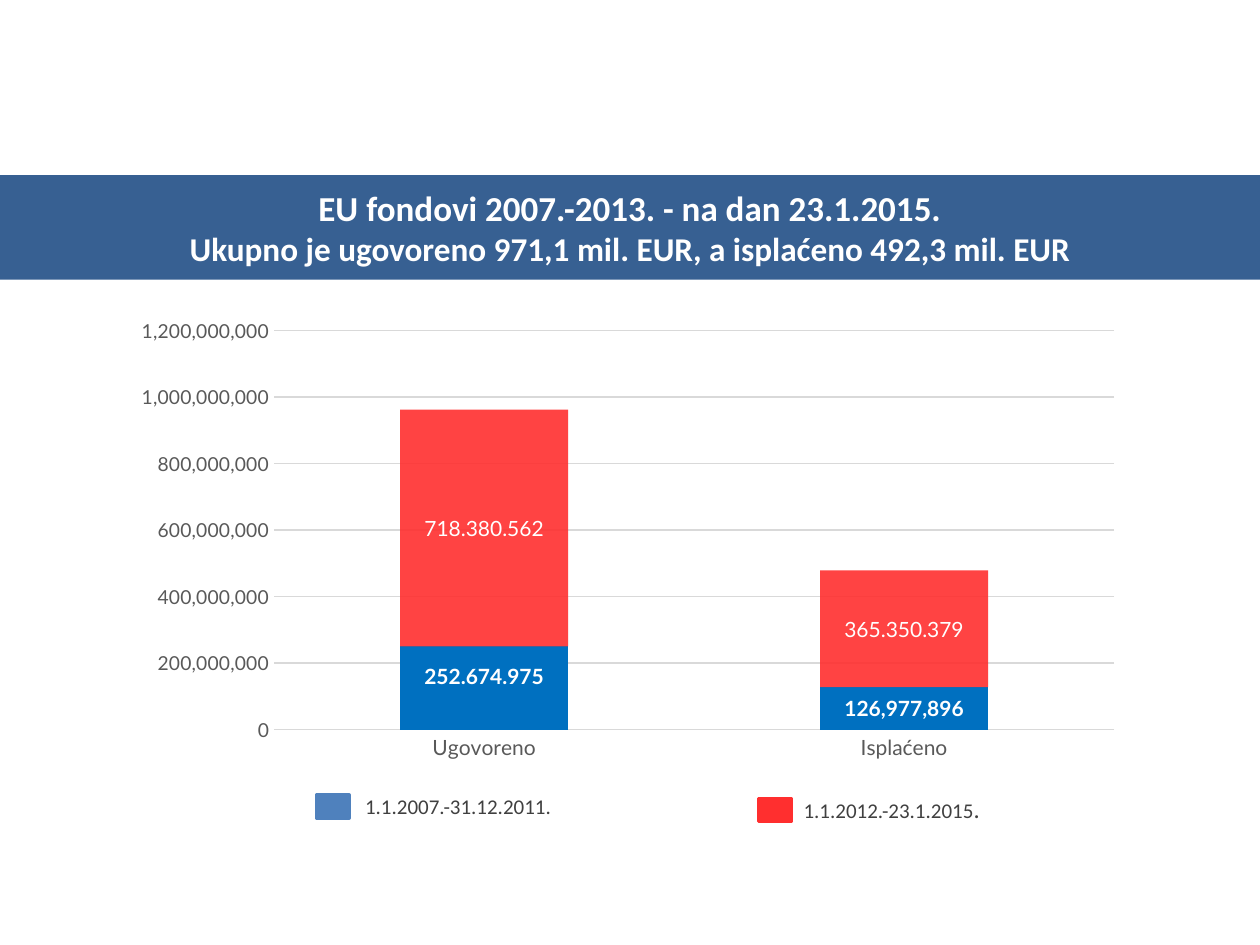
from dataclasses import dataclass

from lxml import etree
from pptx import Presentation
from pptx import util as u
from pptx.chart.data import CategoryChartData
from pptx.dml.color import RGBColor
from pptx.enum import chart as ch, shapes, text
from pptx.oxml import parse_xml
from pptx.oxml.ns import nsdecls, qn

NAVY = RGBColor(0x37, 0x60, 0x92)
BLUE = RGBColor(0x00, 0x70, 0xC0)
KEY_BLUE = RGBColor(0x4F, 0x81, 0xBD)
RED = RGBColor(0xFF, 0x2F, 0x2F)
WHITE = RGBColor(0xFF, 0xFF, 0xFF)
BLACK = RGBColor(0, 0, 0)
GREY = RGBColor(0x59, 0x59, 0x59)
DARK = RGBColor(0x40, 0x40, 0x40)
GRID = RGBColor(0xD9, 0xD9, 0xD9)


@dataclass
class Series:
    name: str
    values: tuple
    color: RGBColor
    labels: dict  # point index -> custom label


@dataclass
class Key:
    left: float
    top: float
    text_left: float
    text_width: float
    color: RGBColor
    runs: tuple  # (text, size)


SERIES = (
    Series("Series 1", (249997189, 126977896), BLUE, {0: "252.674.975"}),
    Series("Series 2", (712108231, 351492316), RED,
           {0: "718.380.562", 1: "365.350.379"}),
)
KEYS = (
    Key(6.38, 16.03, 7.11, 4.45, KEY_BLUE, (("1.1.2007.-31.12.2011.", 12),)),
    Key(15.29, 16.1, 15.95, 4.14, RED, (("1.1.2012.-23.1.2015", 12), (".", 14))),
)
TITLE = (
    ("EU fondovi 2007.-2013. - na dan 23.1.2015.", 20),
    ("Ukupno je ugovoreno 971,1 mil. EUR, a isplaćeno 492,3 mil. EUR", 19),
)


def set_font(font, name: str, size: float, color: RGBColor, bold: bool = False) -> None:
    font.name, font.size, font.bold = name, u.Pt(size), bold
    font.color.rgb = color


def manual_layout(**values):
    """Layout element of a chart part; keys are its child tags, in order."""
    items = "".join(f'<c:{tag} val="{v}"/>' for tag, v in values.items())
    return parse_xml(f'<c:layout {nsdecls("c")}><c:manualLayout>{items}'
                     '</c:manualLayout></c:layout>')


def draw_title(s) -> None:
    sp = s.shapes.title
    sp.left, sp.top, sp.width, sp.height = map(u.Cm, (0, 3.53, 25.4, 2.11))
    sp.fill.solid()
    sp.fill.fore_color.rgb = NAVY
    tf = sp.text_frame
    tf.auto_size = text.MSO_AUTO_SIZE.NONE
    tf.vertical_anchor = text.MSO_ANCHOR.MIDDLE
    tf.text = "\n".join(line for line, _ in TITLE)
    for p, (_, size) in zip(tf.paragraphs, TITLE):
        p.alignment = text.PP_ALIGN.CENTER
        p.space_before = u.Pt(0)
        set_font(p.runs[0].font, "Calibri", size, WHITE, True)


def draw_chart(s) -> None:
    data = CategoryChartData(number_format="#,##0")
    data.categories = ("Ugovoreno", "Isplaćeno")
    for item in SERIES:
        data.add_series(item.name, item.values)
    chart = s.shapes.add_chart(
        ch.XL_CHART_TYPE.COLUMN_STACKED, u.Cm(2.69), u.Cm(5.72),
        u.Cm(19.99), u.Cm(10.49), data).chart
    chart.has_legend = chart.has_title = False
    set_font(chart.font, "Lato", 10, BLACK)

    # Plot area
    area = chart.plots[0]
    area.gap_width, area.overlap, area.vary_by_categories = 150, 100, False
    plot_area = chart.element.find(".//" + qn("c:plotArea"))
    for old in plot_area.findall(qn("c:layout")):
        plot_area.remove(old)
    plot_area.insert(0, manual_layout(
        layoutTarget="inner", xMode="edge", yMode="edge",
        x=0.142, y=0.09, w=0.847, h=0.767))

    # Axes
    for axis, size in ((chart.category_axis, 12), (chart.value_axis, 11)):
        axis.major_tick_mark = axis.minor_tick_mark = ch.XL_TICK_MARK.NONE
        set_font(axis.tick_labels.font, "Lato", size, GREY)
    values = chart.value_axis
    values.minimum_scale, values.maximum_scale = 0, 1_200_000_000
    values.major_unit = 200_000_000
    values.tick_labels.number_format = "#,##0"
    values.tick_labels.number_format_is_linked = False
    values.format.line.fill.background()
    for line in (chart.category_axis.format.line, values.major_gridlines.format.line):
        line.color.rgb, line.width = GRID, u.Pt(0.75)

    # Series and their labels
    for series, item in zip(area.series, SERIES):
        series.format.fill.solid()
        series.format.fill.fore_color.rgb = item.color
        labels = series.data_labels
        labels.show_value = True
        labels.number_format, labels.number_format_is_linked = "#,##0", False
        set_font(labels.font, "Lato", 12, WHITE, True)
        for i, label in item.labels.items():
            tf = series.points[i].data_label.text_frame
            tf.text = label
            set_font(tf.paragraphs[0].runs[0].font, "Lato", 12, WHITE,
                     item.color == BLUE)

    # Red is slightly transparent; the first blue label sits above the middle
    first, second = area.series
    red = second.format.fill._xPr.find(".//" + qn("a:srgbClr"))
    etree.SubElement(red, qn("a:alpha")).set("val", "90000")
    idx = first._element.find(".//" + qn("c:dLbl") + "/" + qn("c:idx"))
    idx.addnext(manual_layout(x=0, y=-0.023))


def draw_key(s, key: Key) -> None:
    sp = s.shapes.add_shape(shapes.MSO_SHAPE.RECTANGLE, u.Cm(key.left),
                            u.Cm(key.top), u.Cm(0.66), u.Cm(0.46))
    sp.shadow.inherit = False
    sp.fill.solid()
    sp.fill.fore_color.rgb = sp.line.color.rgb = key.color
    sp.line.width = u.Pt(2)
    tf = s.shapes.add_textbox(u.Cm(key.text_left), u.Cm(15.88),
                              u.Cm(key.text_width), u.Cm(0.8)).text_frame
    tf.word_wrap = False
    tf.auto_size = text.MSO_AUTO_SIZE.SHAPE_TO_FIT_TEXT
    for label, size in key.runs:
        r = tf.paragraphs[0].add_run()
        r.text = label
        set_font(r.font, "Calibri", size, DARK)


def main() -> None:
    prs = Presentation()
    prs.slide_width, prs.slide_height = u.Cm(25.4), u.Cm(19.05)
    s = prs.slides.add_slide(prs.slide_layouts[5])
    draw_title(s)
    draw_chart(s)
    for key in KEYS:
        draw_key(s, key)
    prs.save("out.pptx")


if __name__ == "__main__":
    main()
